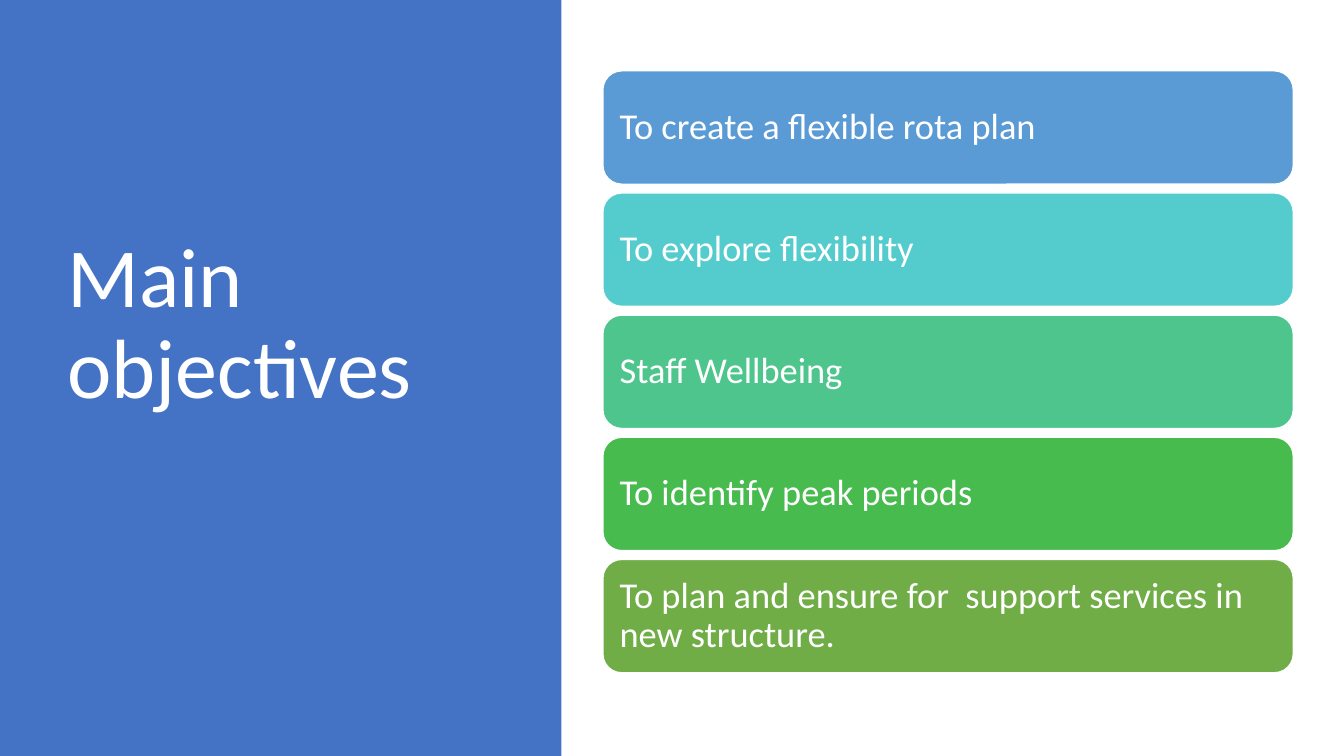
from dataclasses import dataclass

from pptx import Presentation
from pptx.dml.color import RGBColor
from pptx.enum.shapes import MSO_SHAPE
from pptx.enum.text import MSO_ANCHOR, MSO_AUTO_SIZE, PP_ALIGN
from pptx.util import Pt

RECTANGLE = MSO_SHAPE.RECTANGLE
ROUNDED_RECTANGLE = MSO_SHAPE.ROUNDED_RECTANGLE
MIDDLE = MSO_ANCHOR.MIDDLE
LEFT = PP_ALIGN.LEFT
NO_AUTO_SIZE = MSO_AUTO_SIZE.NONE
TITLE_ONLY_LAYOUT = 5

SLIDE_WIDTH, SLIDE_HEIGHT = 960, 540
PANEL_WIDTH = 401
CARD_LEFT, CARD_TOP = 430.6, 50.6
CARD_WIDTH, CARD_HEIGHT = 493.2, 81
CARD_PITCH = 87.25


@dataclass(frozen=True)
class Theme:
    font: str = "Calibri"
    text: str = "FFFFFF"
    panel: str = "4472C4"
    cards: tuple = ("5B9BD5", "54CCCD", "4DC58D", "48BB4F", "70AD47")
    title_size: float = 60
    card_size: float = 26
    line_spacing: float = 0.9


OBJECTIVES = (
    "To create a flexible rota plan",
    "To explore flexibility",
    "Staff Wellbeing",
    "To identify peak periods",
    "To plan and ensure for  support services in new structure.",
)


class SlideBuilder:
    def __init__(self, slide, theme):
        self.slide = slide
        self.theme = theme

    def set_text(self, shape, text, size, margins):
        frame = shape.text_frame
        frame.text = text
        frame.word_wrap = True
        frame.auto_size = NO_AUTO_SIZE
        frame.vertical_anchor = MIDDLE
        (frame.margin_left, frame.margin_top,
         frame.margin_right, frame.margin_bottom) = map(Pt, margins)
        paragraph = frame.paragraphs[0]
        paragraph.alignment = LEFT
        paragraph.line_spacing = self.theme.line_spacing
        for run in paragraph.runs:
            run.font.name = self.theme.font
            run.font.size = Pt(size)
            run.font.color.rgb = RGBColor.from_string(self.theme.text)

    def block(self, kind, left, top, width, height, color):
        shape = self.slide.shapes.add_shape(
            kind, Pt(left), Pt(top), Pt(width), Pt(height))
        shape.shadow.inherit = False
        shape.fill.solid()
        shape.fill.fore_color.rgb = RGBColor.from_string(color)
        shape.line.fill.background()
        return shape

    def panel(self, width, height):
        panel = self.block(RECTANGLE, 0, 0, width, height, self.theme.panel)
        self.slide.shapes.title.element.addprevious(panel.element)

    def title(self, text, left, top, width, height, margins):
        title = self.slide.shapes.title
        title.left, title.top = Pt(left), Pt(top)
        title.width, title.height = Pt(width), Pt(height)
        self.set_text(title, text, self.theme.title_size, margins)

    def card(self, text, left, top, width, height, color):
        card = self.block(ROUNDED_RECTANGLE, left, top, width, height, color)
        card.line.color.rgb = RGBColor.from_string(self.theme.text)
        card.line.width = Pt(1)
        self.set_text(card, text, self.theme.card_size, (8, 8, 8, 8))


def main():
    presentation = Presentation()
    presentation.slide_width = Pt(SLIDE_WIDTH)
    presentation.slide_height = Pt(SLIDE_HEIGHT)
    slide = presentation.slides.add_slide(
        presentation.slide_layouts[TITLE_ONLY_LAYOUT])
    theme = Theme()
    builder = SlideBuilder(slide, theme)

    builder.panel(PANEL_WIDTH, SLIDE_HEIGHT)
    builder.title("Main objectives", 41, 49, 299.5, 433.4, (7.2, 3.6, 7.2, 69.6))
    for index, (objective, color) in enumerate(zip(OBJECTIVES, theme.cards)):
        builder.card(objective, CARD_LEFT, CARD_TOP + index * CARD_PITCH,
                     CARD_WIDTH, CARD_HEIGHT, color)

    presentation.save("out.pptx")


if __name__ == "__main__":
    main()
